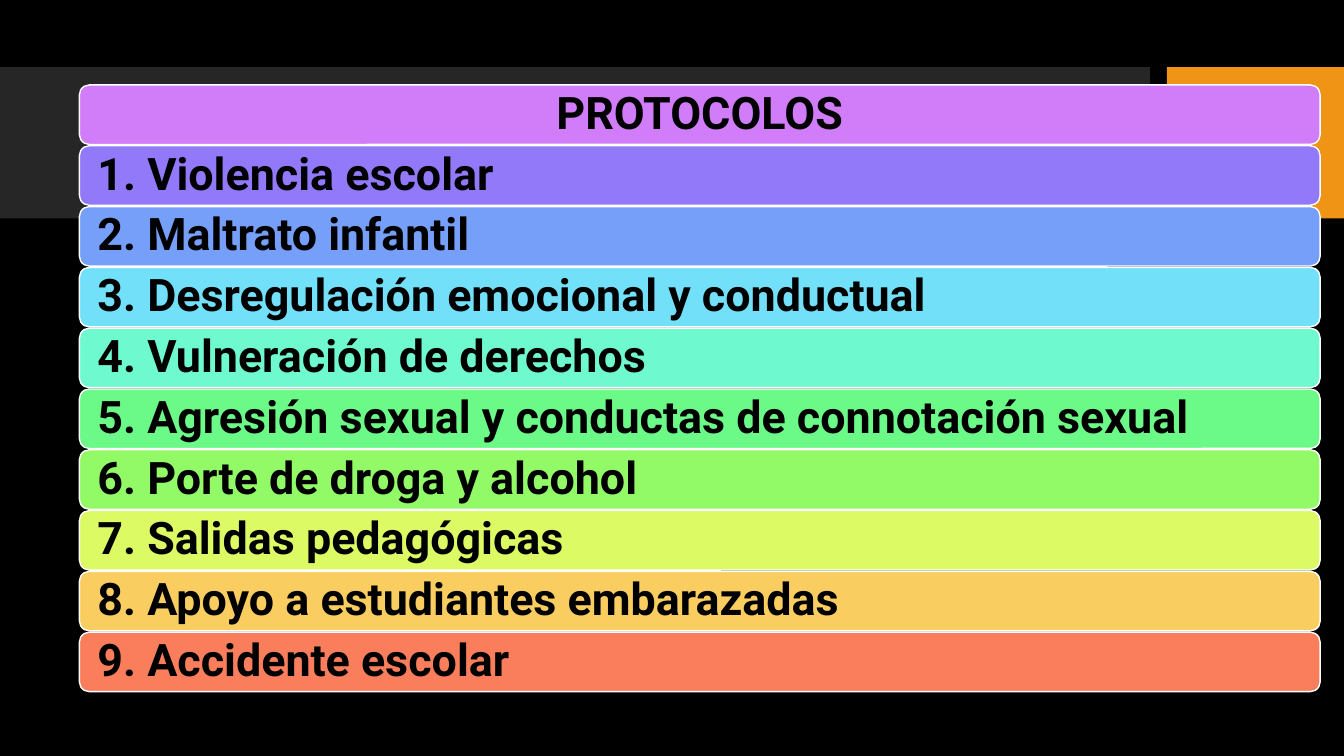
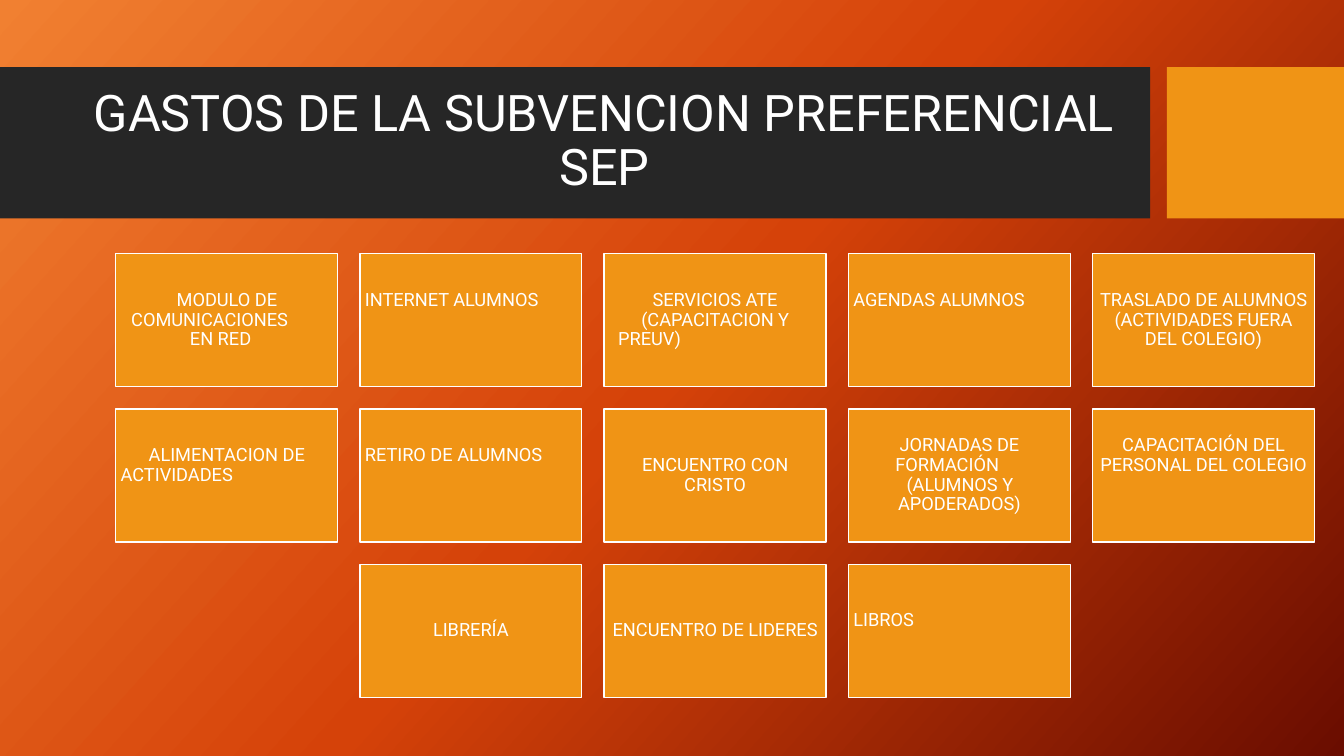
from copy import deepcopy

from pptx import Presentation
from pptx.dml.color import RGBColor
from pptx.enum.shapes import MSO_SHAPE
from pptx.enum.text import MSO_ANCHOR, PP_ALIGN
from pptx.oxml.ns import qn
from pptx.util import Pt

RECT, ROUND = MSO_SHAPE.RECTANGLE, MSO_SHAPE.ROUNDED_RECTANGLE
LEFT, CENTER = PP_ALIGN.LEFT, PP_ALIGN.CENTER
MIDDLE = MSO_ANCHOR.MIDDLE

WIDE, HIGH = 960, 540
FONT = "Roboto"
BLACK, WHITE, DARK, ORANGE = "000000", "FFFFFF", "262626", "F09415"
GLOW = [(0, "F18031"), (0.5, "D54209"), (1, "6A0D00")]

TITLE = {"size": Pt(36), "name": FONT}
ROW = {"size": Pt(32), "name": FONT, "bold": True}
CARD = {"size": Pt(13), "name": FONT}
LINE = 14  # height of one line of card text

ROWS = [
    ("PROTOCOLOS", "D17DF9"),
    ("1. Violencia escolar", "9179F9"),
    ("2. Maltrato infantil", "769FF9"),
    ("3. Desregulación emocional y conductual", "72E0F9"),
    ("4. Vulneración de derechos", "6EF9CF"),
    ("5. Agresión sexual y conductas de connotación sexual", "6BF987"),
    ("6. Porte de droga y alcohol", "93FA67"),
    ("7. Salidas pedagógicas", "DBFA63"),
    ("8. Apoyo a estudiantes embarazadas", "FACD60"),
    ("9. Accidente escolar", "FA7E5C"),
]

# Each card: text, free lines below it, left indent of each line (none: centred)
CARDS = [
    [("MODULO DE\nCOMUNICACIONES\nEN RED", 0, (40, 7.5, 49.5)),
     ("INTERNET ALUMNOS", 2, (0,)),
     ("SERVICIOS ATE\n(CAPACITACION Y\nPREUV)", 0, (31, 23, 6.5)),
     ("AGENDAS ALUMNOS", 2, (0,)),
     ("TRASLADO DE ALUMNOS (ACTIVIDADES FUERA DEL COLEGIO)", 0, ())],
    [("ALIMENTACION DE\nACTIVIDADES", 1, (20, 0)),
     ("RETIRO DE ALUMNOS", 2, (0,)),
     ("ENCUENTRO CON CRISTO", 0, ()),
     ("JORNADAS DE\nFORMACIÓN\n(ALUMNOS Y\nAPODERADOS)", 0, (33, 30, 38, 32)),
     ("CAPACITACIÓN DEL PERSONAL DEL COLEGIO", 2, ())],
    [("LIBRERÍA", 0, ()),
     ("ENCUENTRO DE LIDERES", 0, ()),
     ("LIBROS", 1, (0,))],
]


def tint(code):
    return RGBColor.from_string(code)


def block(slide, kind, box, fill, line=None):
    shape = slide.shapes.add_shape(kind, *map(Pt, box))
    shape.shadow.inherit = False
    shape.fill.solid()
    shape.fill.fore_color.rgb = tint(fill)
    if line:
        shape.line.color.rgb = tint(line)
        shape.line.width = Pt(1)
    else:
        shape.line.fill.background()
    return shape


def write(shape, text, style, color, pads, align=CENTER, dents=()):
    frame = shape.text_frame
    frame.word_wrap = True
    frame.vertical_anchor = MIDDLE
    for side, pad in zip(("left", "top", "right", "bottom"), pads):
        setattr(frame, f"margin_{side}", Pt(pad))
    frame.text = text
    for para in frame.paragraphs:
        para.alignment = align
        para.line_spacing = 0.9
        for key, value in style.items():
            setattr(para.font, key, value)
        para.font.color.rgb = tint(color)
    for para, dent in zip(frame.paragraphs, dents):
        para.alignment = LEFT
        if dent:
            para._p.get_or_add_pPr().set("marL", str(Pt(dent)))


# Bands shared by all slides
def bands(slide):
    block(slide, RECT, (0, 48, 821.5, 108), DARK)
    block(slide, RECT, (833.5, 48, WIDE - 833.5, 108), ORANGE)


def title(slide, text, box):
    shape = slide.shapes.add_textbox(*map(Pt, box))
    write(shape, text, TITLE, WHITE, (7.2, 3.6, 7.2, 3.6))


# Stack of coloured rows, the first one being the heading
def stack(slide, box, rows, gap=0.9):
    x, y, w, h = box
    step = (h + gap) / len(rows)
    for i, (text, fill) in enumerate(rows):
        shape = block(slide, ROUND, (x, y + i * step, w, step - gap), fill, WHITE)
        write(shape, text, ROW, BLACK, (10.8, 0, 10.8, 0), LEFT if i else CENTER)


# Grid of cards, with short rows centred
def grid(slide, box, rows, gap=15.9):
    x, y, w, h = box
    cols = max(map(len, rows))
    dx, dy = (w + gap) / cols, (h + gap) / len(rows)
    for r, row in enumerate(rows):
        start = x + (cols - len(row)) * dx / 2
        for c, (text, free, dents) in enumerate(row):
            place = (start + c * dx, y + r * dy, dx - gap, dy - gap)
            shape = block(slide, RECT, place, ORANGE, WHITE)
            pads = (3.6, 3.6, 3.6, 3.6 + free * LINE)
            write(shape, text, CARD, WHITE, pads, dents=dents)


# Backgrounds
def plain(slide, color):
    fill = slide.background.fill
    fill.solid()
    fill.fore_color.rgb = tint(color)


def blend(slide, stops, angle):
    fill = slide.background.fill
    fill.gradient()
    fill.gradient_angle = 360 - angle
    marks = slide._element.find(".//" + qn("a:gsLst"))
    while len(marks) < len(stops):
        marks.append(deepcopy(marks[-1]))
    for mark, (place, color) in zip(fill.gradient_stops, stops):
        mark.position = place
        mark.color.rgb = tint(color)


def rules(slide):
    plain(slide, BLACK)
    bands(slide)
    stack(slide, (56.7, 60.7, 886.3, 433.4), ROWS)


def costs(slide):
    blend(slide, GLOW, 42)
    bands(slide)
    title(slide, "GASTOS DE LA SUBVENCION PREFERENCIAL SEP", (53.3, 59, 756.7, 85))
    grid(slide, (82.6, 181.2, 856.3, 317), CARDS)


def main():
    deck = Presentation()
    deck.slide_width, deck.slide_height = Pt(WIDE), Pt(HIGH)
    for fill in (rules, costs):
        fill(deck.slides.add_slide(deck.slide_layouts[6]))
    deck.save("out.pptx")


if __name__ == "__main__":
    main()
